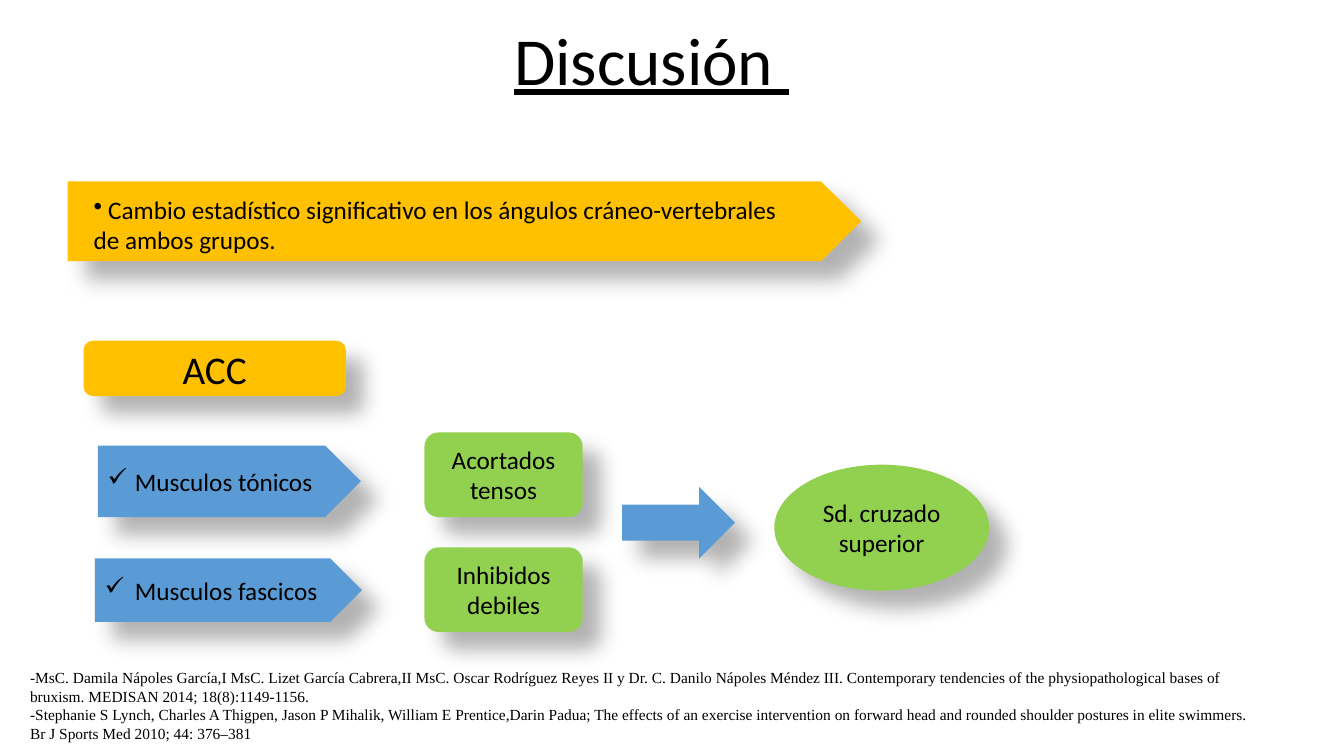
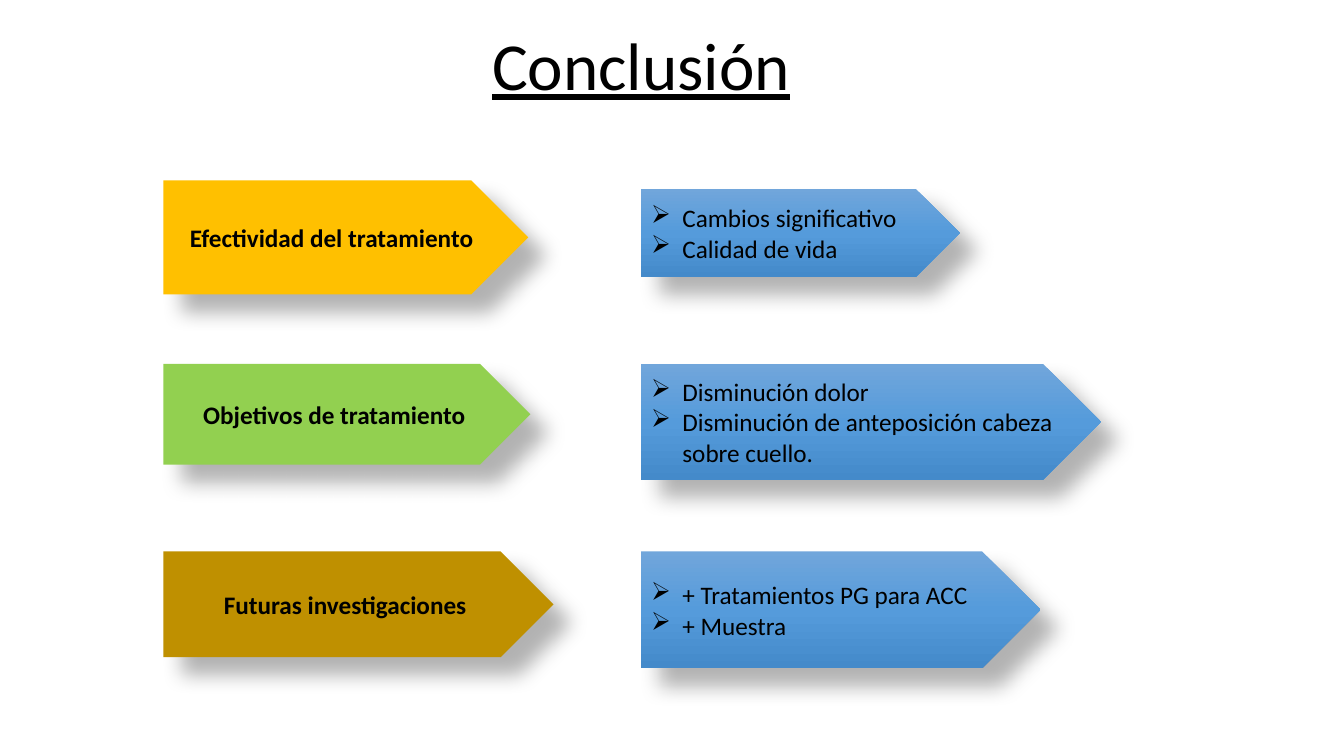
from copy import deepcopy
from dataclasses import dataclass

from lxml import etree
from pptx import Presentation
from pptx.dml.color import RGBColor
from pptx.enum.shapes import MSO_SHAPE
from pptx.enum.text import MSO_ANCHOR, MSO_AUTO_SIZE, PP_ALIGN
from pptx.oxml.ns import qn
from pptx.util import Emu, Pt

PENTAGON = MSO_SHAPE.PENTAGON
ROUNDED = MSO_SHAPE.ROUNDED_RECTANGLE
ARROW = MSO_SHAPE.RIGHT_ARROW
OVAL = MSO_SHAPE.OVAL
LEFT, CENTER = PP_ALIGN.LEFT, PP_ALIGN.CENTER
TOP, MIDDLE = MSO_ANCHOR.TOP, MSO_ANCHOR.MIDDLE
NO_AUTOFIT = MSO_AUTO_SIZE.NONE

EMU_PER_PX = 9144  # 100 px to the inch
TITLE_ONLY = 5


@dataclass(frozen=True)
class Theme:
    text: str = "000000"
    amber: str = "FFC000"
    ochre: str = "BF9000"
    blue: str = "5B9BD5"
    green: str = "92D050"
    blue_gradient: tuple = ((0, "71A6DB"), (0.5, "559BDB"), (1, "448ACA"))
    font: str = "Calibri"
    reference_font: str = "Times New Roman"
    title_size: int = 48
    heading_size: int = 28
    body_size: int = 18
    reference_size: int = 11


THEME = Theme()


def px(value):
    return Emu(value * EMU_PER_PX)


def write_text(frame, lines, *, size=THEME.body_size, font=THEME.font, bold=False,
               underline=False, align=LEFT, anchor=TOP, bullet=None, hanging=0):
    """Fill a text frame with one paragraph for each line."""
    frame.word_wrap = True
    frame.auto_size = NO_AUTOFIT
    frame.vertical_anchor = anchor
    for index, line in enumerate(lines):
        paragraph = frame.add_paragraph() if index else frame.paragraphs[0]
        paragraph.alignment = align
        if bullet:
            properties = paragraph._p.get_or_add_pPr()
            properties.set("marL", str(px(hanging)))
            properties.set("indent", str(px(-hanging)))
            etree.SubElement(properties, qn("a:buChar"), char=bullet)
        run = paragraph.add_run()
        run.text = line
        run.font.name = font
        run.font.size = Pt(size)
        run.font.bold = bold
        run.font.underline = underline
        run.font.color.rgb = RGBColor.from_string(THEME.text)


def add_shadow(shape):
    """Give the shape a soft shadow towards the lower right."""
    shape.shadow.inherit = False
    effects = shape._element.spPr.find(qn("a:effectLst"))
    shadow = etree.SubElement(effects, qn("a:outerShdw"), blurRad=str(Pt(15)),
                              dist=str(Pt(18)), dir="2700000", algn="tl", rotWithShape="0")
    color = etree.SubElement(shadow, qn("a:srgbClr"), val=THEME.text)
    etree.SubElement(color, qn("a:alpha"), val="30000")


def fill_gradient(shape, stops):
    """Fill the shape from top to bottom with three stops."""
    shape.fill.gradient()
    shape.fill.gradient_angle = 270
    stop_list = shape._element.spPr.find(qn("a:gradFill")).find(qn("a:gsLst"))
    stop_list.insert(1, deepcopy(stop_list[0]))
    for stop, (position, color) in zip(shape.fill.gradient_stops, stops):
        stop.position = position
        stop.color.rgb = RGBColor.from_string(color)


class Deck:
    def __init__(self):
        self.presentation = Presentation()
        self.presentation.slide_width = px(1333)
        self.presentation.slide_height = px(750)
        self.slide = None

    def add_slide(self, title, left, top):
        layout = self.presentation.slide_layouts[TITLE_ONLY]
        self.slide = self.presentation.slides.add_slide(layout)
        shape = self.slide.shapes.title
        shape.left, shape.top = px(left), px(top)
        shape.width, shape.height = px(585), px(172)
        write_text(shape.text_frame, [title], size=THEME.title_size, underline=True)

    def add_block(self, kind, box, fill, lines=(), **text_format):
        shape = self.slide.shapes.add_shape(kind, *map(px, box))
        if isinstance(fill, tuple):
            fill_gradient(shape, fill)
        else:
            shape.fill.solid()
            shape.fill.fore_color.rgb = RGBColor.from_string(fill)
        shape.line.fill.background()
        add_shadow(shape)
        if lines:
            write_text(shape.text_frame, lines, **{"align": CENTER, "anchor": MIDDLE, **text_format})

    def add_text(self, box, lines, **text_format):
        shape = self.slide.shapes.add_textbox(*map(px, box))
        write_text(shape.text_frame, lines, **text_format)


def build_discussion(deck):
    deck.add_slide("Discusión ", 500, 13)

    # Main finding
    deck.add_block(PENTAGON, (67, 180, 787, 79), THEME.amber)
    deck.add_text((83, 188, 709, 81),
                  [" Cambio estadístico significativo en los ángulos cráneo-vertebrales de ambos grupos."],
                  bullet="•")

    # Muscle groups and their state
    deck.add_block(ROUNDED, (83, 338, 260, 55), THEME.amber, ["ACC"], size=THEME.heading_size)
    muscles = [((97, 442, 261, 71), "Musculos tónicos", 27),
               ((94, 554, 265, 63), "Musculos fascicos", 30)]
    for box, label, hanging in muscles:
        deck.add_block(PENTAGON, box, THEME.blue, [label], align=LEFT, bullet="✓", hanging=hanging)
    for top, lines in [(429, ["Acortados", "tensos"]), (543, ["Inhibidos", "debiles"])]:
        deck.add_block(ROUNDED, (421, top, 157, 84), THEME.green, lines)

    # Resulting syndrome
    deck.add_block(ARROW, (617, 483, 112, 71), THEME.blue)
    deck.add_block(OVAL, (768, 461, 213, 125), THEME.green, ["Sd. cruzado superior"])

    # References
    deck.add_text((20, 658, 1240, 84), [
        "-MsC. Damila Nápoles García,I MsC. Lizet García Cabrera,II MsC. Oscar Rodríguez Reyes II "
        "y Dr. C. Danilo Nápoles Méndez III. Contemporary tendencies of the physiopathological "
        "bases of bruxism. MEDISAN 2014; 18(8):1149-1156.",
        "-Stephanie S Lynch, Charles A Thigpen, Jason P Mihalik, William E Prentice,Darin Padua; "
        "The effects of an exercise intervention on forward head and rounded shoulder postures "
        "in elite swimmers. Br J Sports Med 2010; 44: 376–381",
    ], size=THEME.reference_size, font=THEME.reference_font)


def build_conclusion(deck):
    deck.add_slide("Conclusión", 478, 18)

    # Each topic: top, width, height, colour, label; then its points: top, width, height, lines
    rows = [
        ((179, 362, 113, THEME.amber, "Efectividad del tratamiento"),
         (187, 316, 88, ["Cambios significativo", "Calidad de vida"])),
        ((361, 364, 100, THEME.green, "Objetivos de tratamiento"),
         (361, 456, 115, ["Disminución dolor", "Disminución de anteposición cabeza sobre cuello."])),
        ((547, 387, 105, THEME.ochre, "Futuras investigaciones"),
         (547, 396, 116, ["+ Tratamientos PG para ACC", "+ Muestra"])),
    ]
    for topic, points in rows:
        top, width, height, color, label = topic
        deck.add_block(PENTAGON, (162, top, width, height), color, [label], bold=True)
        top, width, height, lines = points
        deck.add_block(PENTAGON, (636, top, width, height), THEME.blue_gradient, lines,
                       align=LEFT, bullet="➢", hanging=31)


def main():
    deck = Deck()
    build_discussion(deck)
    build_conclusion(deck)
    deck.presentation.save("out.pptx")


if __name__ == "__main__":
    main()
